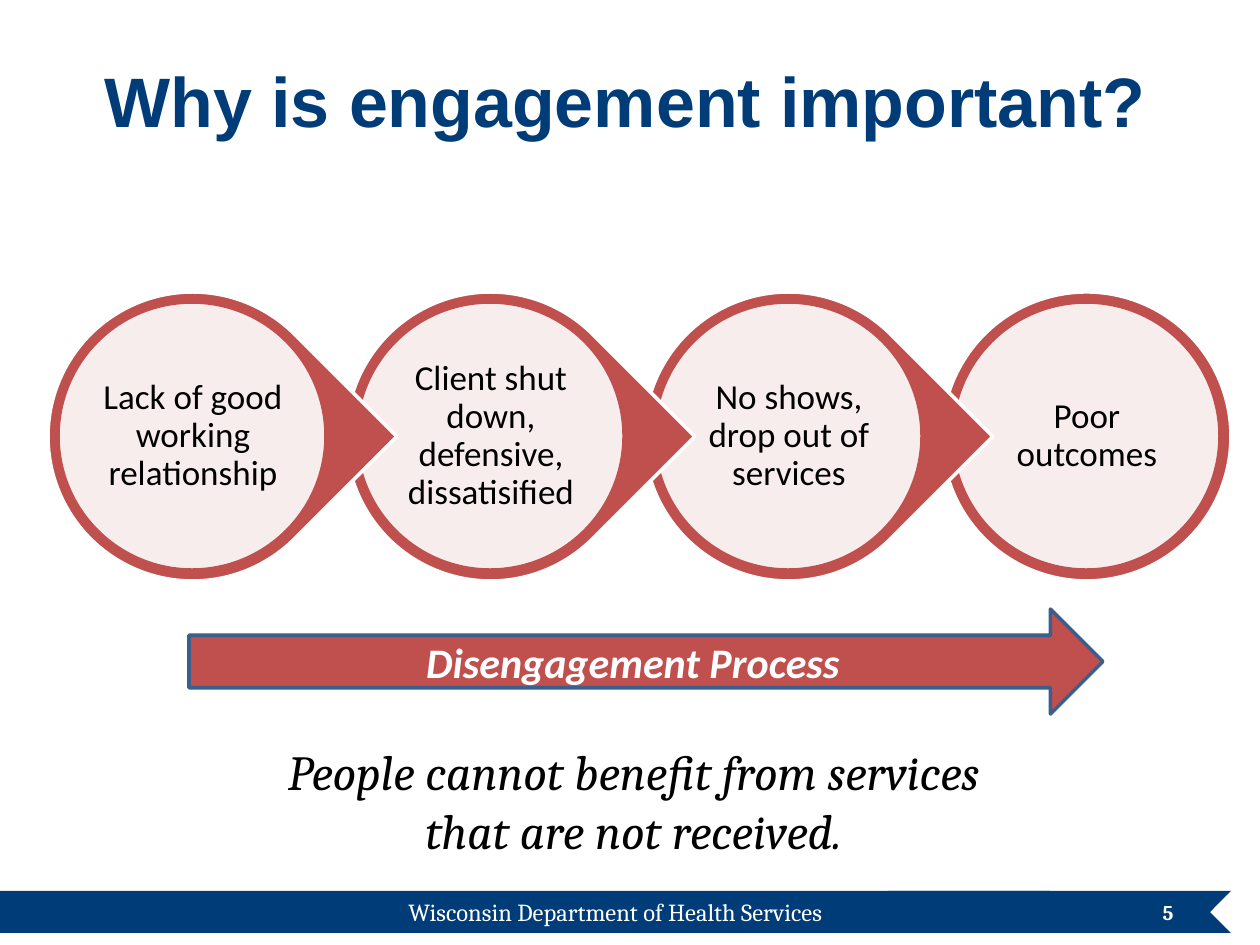
from dataclasses import dataclass
from lxml import etree
from pptx import Presentation
from pptx import util as u
from pptx.dml.color import RGBColor
from pptx.enum import shapes, text
from pptx.oxml.ns import qn

SCALE = 914400 / 126


def px(length):
    """Turn px into EMU."""
    return u.Emu(round(length * SCALE))


@dataclass(frozen=True)
class Theme:
    """Colours, fonts and type sizes of the slide."""
    navy: str = "003D78"
    red: str = "C0504D"
    white: str = "FFFFFF"
    black: str = "000000"
    edge: str = "3A5F8C"
    heading: str = "Arial"
    sans: str = "Calibri"
    serif: str = "Cambria"
    title_size: int = 40
    message_size: int = 28
    arrow_size: int = 24
    step_size: int = 20
    footer_size: int = 14
    number_size: int = 12
    line: int = 2


class SlideBuilder:
    """Draws styled elements on the current slide."""

    def __init__(self, slide, theme):
        """Keep the slide and its theme."""
        self.slide = slide
        self.theme = theme

    def place(self, shape, box):
        """Move and size a shape."""
        shape.left, shape.top, shape.width, shape.height = map(px, box)

    def set_text(self, shape, lines, size, font, color, bold=False, italic=False,
                 align=text.PP_ALIGN.CENTER, anchor=text.MSO_ANCHOR.MIDDLE, spacing=1.0):
        """Set one paragraph for each line."""
        frame = shape.text_frame
        frame.word_wrap = True
        frame.auto_size = text.MSO_AUTO_SIZE.NONE
        frame.vertical_anchor = anchor
        for index, line in enumerate(lines):
            paragraph = frame.add_paragraph() if index else frame.paragraphs[0]
            paragraph.alignment = align
            paragraph.line_spacing = spacing
            paragraph.space_before = u.Pt(0)
            run = paragraph.add_run()
            run.text = line
            run.font.size = u.Pt(size)
            run.font.name = font
            run.font.bold = bold
            run.font.italic = italic
            run.font.color.rgb = RGBColor.from_string(color)

    def shape(self, kind, box, fill, line=None, rotation=0, alpha=None):
        """Add a preset shape."""
        shape = self.slide.shapes.add_shape(kind, *map(px, box))
        shape.shadow.inherit = False
        shape.rotation = rotation
        shape.fill.solid()
        shape.fill.fore_color.rgb = RGBColor.from_string(fill)
        if alpha:
            color = shape.element.spPr.find(qn("a:solidFill"))[0]
            etree.SubElement(color, qn("a:alpha")).set("val", str(alpha * 1000))
        if line:
            shape.line.color.rgb = RGBColor.from_string(line)
            shape.line.width = u.Pt(self.theme.line)
        else:
            shape.line.fill.background()
        return shape

    def label(self, box, line, size, font, color, inset=None, **style):
        """Add a text box."""
        label = self.slide.shapes.add_textbox(*map(px, box))
        if inset is not None:
            frame = label.text_frame
            frame.margin_left = frame.margin_right = px(inset)
            frame.margin_top = frame.margin_bottom = px(inset)
        self.set_text(label, [line], size, font, color, **style)

    def title(self, box, line):
        """Fill the title placeholder."""
        title = self.slide.shapes.title
        self.place(title, box)
        self.set_text(title, [line], self.theme.title_size, self.theme.heading,
                      self.theme.navy, bold=True)

    def message(self, box, lines):
        """Fill the body placeholder without bullets."""
        body = self.slide.placeholders[1]
        self.place(body, box)
        self.set_text(body, lines, self.theme.message_size, self.theme.serif,
                      self.theme.black, italic=True, anchor=text.MSO_ANCHOR.TOP)
        for paragraph in body.text_frame.paragraphs:
            properties = paragraph._p.get_or_add_pPr()
            properties.set("marL", "0")
            properties.set("indent", "0")
            etree.SubElement(properties, qn("a:buNone"))

    def step(self, left, top, line, last):
        """Add one ringed step, pointing right unless it is the last."""
        theme = self.theme
        kinds = shapes.MSO_SHAPE
        self.shape(kinds.OVAL if last else kinds.TEAR, (left, top, 289, 289),
                   theme.red, theme.white, rotation=0 if last else 45)
        self.shape(kinds.OVAL, (left + 10, top + 10, 268, 268),
                   theme.white, theme.red, alpha=90)
        self.label((left + 49, top + 48, 192, 192), line, theme.step_size,
                   theme.sans, theme.black, inset=4, spacing=0.9)

    def arrow(self, box, line):
        """Add the labelled block arrow."""
        theme = self.theme
        arrow = self.shape(shapes.MSO_SHAPE.RIGHT_ARROW, box, theme.red, theme.edge)
        self.set_text(arrow, [line], theme.arrow_size, theme.sans, theme.white,
                      bold=True, italic=True)

    def footer(self, line, number):
        """Add the ribbon, its text and the slide number."""
        theme = self.theme
        self.shape(shapes.MSO_SHAPE.CHEVRON, (867, 891, 364, 42), theme.navy, rotation=180)
        self.shape(shapes.MSO_SHAPE.RECTANGLE, (0, 891, 1050, 42), theme.navy)
        self.label((0, 891, 1231, 43), line, theme.footer_size, theme.serif,
                   theme.white, anchor=text.MSO_ANCHOR.TOP)
        self.label((892, 887, 294, 50), number, theme.number_size, theme.serif,
                   theme.white, bold=True, align=text.PP_ALIGN.RIGHT)


def main():
    """Build and save the slide."""
    presentation = Presentation()
    presentation.slide_width, presentation.slide_height = px(1260), px(945)
    slide = presentation.slides.add_slide(presentation.slide_layouts[1])
    builder = SlideBuilder(slide, Theme())
    builder.footer("Wisconsin Department of Health Services", "5")
    builder.title((53, 0, 1144, 199), "Why is engagement important?")
    builder.message((30, 735, 1207, 136),
                    ["People cannot benefit from services", "that are not received."])
    steps = ["Lack of good working relationship",
             "Client shut down, defensive, dissatisified",
             "No shows, drop out of services",
             "Poor outcomes"]
    for index, line in reversed(list(enumerate(steps))):
        builder.step(48 + 298 * index, 292, line, index == len(steps) - 1)
    builder.arrow((189, 609, 914, 105), "Disengagement Process")
    presentation.save("out.pptx")


if __name__ == "__main__":
    main()
